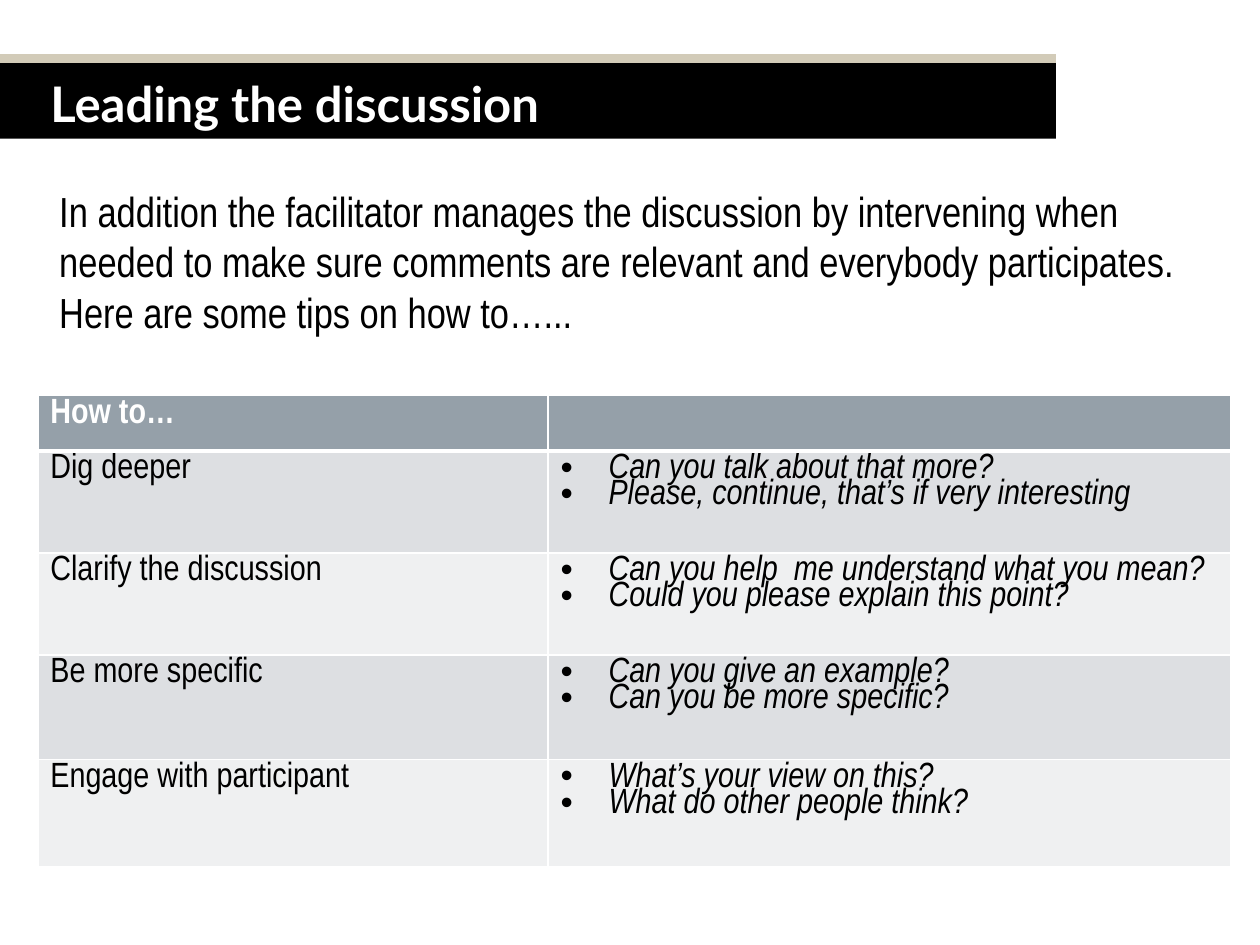
"""Build the slide on leading a discussion."""
from dataclasses import dataclass

import lxml.etree
import pptx
import pptx.dml.color
import pptx.enum.shapes
import pptx.enum.text
import pptx.oxml.ns
import pptx.util

Inches = pptx.util.Inches
Pt = pptx.util.Pt
Anchor = pptx.enum.text.MSO_ANCHOR


@dataclass(frozen=True)
class Theme:
    white: str = "FFFFFF"
    black: str = "000000"
    accent: str = "D2CBB8"
    header: str = "95A0A9"
    bands: tuple[str, str] = ("DDDFE2", "EFF0F1")
    title_font: str = "Lato"
    text_font: str = "Arial Narrow"
    title_size: int = 28
    intro_size: int = 24
    table_size: int = 20


@dataclass(frozen=True)
class Area:
    left: float
    top: float
    width: float
    height: float

    def lengths(self) -> tuple:
        return tuple(map(Inches, (self.left, self.top, self.width, self.height)))


@dataclass(frozen=True)
class Tip:
    goal: str
    phrases: tuple[str, ...]
    height: float


THEME = Theme()
ACCENT_AREA = Area(0, 0.43, 8.38, 0.07)
TITLE_AREA = Area(0, 0.49, 8.38, 0.61)
INTRO_AREA = Area(0.37, 1.42, 9.32, 1.3)
TABLE_AREA = Area(0.3, 3.14, 9.47, 3.74)
COLUMN_WIDTHS = (4.05, 5.42)
HEADER_HEIGHT = 0.44
TITLE = "Leading the discussion"
INTRO = (
    "In addition the facilitator manages the discussion by intervening when "
    "needed to make sure comments are relevant and everybody participates.",
    "Here are some tips on how to…...",
)
TIPS = (
    Tip("Dig deeper", ("Can you talk about that more?",
                       "Please, continue, that’s if very interesting"), 0.81),
    Tip("Clarify the discussion", ("Can you help  me understand what you mean?",
                                   "Could you please explain this point?"), 0.81),
    Tip("Be more specific", ("Can you give an example?",
                             "Can you be more specific?"), 0.83),
    Tip("Engage with participant", ("What’s your view on this?",
                                    "What do other people think?"), 0.85),
)


def rgb(value: str) -> pptx.dml.color.RGBColor:
    return pptx.dml.color.RGBColor.from_string(value)


def add_element(parent, tag: str, **attributes: str):
    element = lxml.etree.SubElement(parent, pptx.oxml.ns.qn(tag))
    for name, value in attributes.items():
        element.set(name, value)
    return element


def paint(target, color: str) -> None:
    target.fill.solid()
    target.fill.fore_color.rgb = rgb(color)


def style(para, font: str, size: int, color: str, bold=False, italic=False) -> None:
    para.font.name = font
    para.font.size = Pt(size)
    para.font.color.rgb = rgb(color)
    para.font.bold = bold
    para.font.italic = italic


def set_bullet(para, symbol: str = "", indent: float = 0) -> None:
    properties = para._p.get_or_add_pPr()
    properties.set("marL", str(Inches(indent)))
    properties.set("indent", str(-Inches(indent)))
    if symbol:
        add_element(properties, "a:buFont", typeface="Arial")
        add_element(properties, "a:buChar", char=symbol)
    else:
        add_element(properties, "a:buNone")


def write_lines(frame, lines: tuple[str, ...]) -> list:
    for index, line in enumerate(lines):
        para = frame.add_paragraph() if index else frame.paragraphs[0]
        para.text = line
    return list(frame.paragraphs)


def place(shape, area: Area, anchor) -> None:
    shape.left, shape.top, shape.width, shape.height = area.lengths()
    shape.text_frame.vertical_anchor = anchor
    shape.text_frame.auto_size = pptx.enum.text.MSO_AUTO_SIZE.NONE
    shape.text_frame.word_wrap = True


def add_title(page) -> None:
    accent = page.shapes.add_shape(
        pptx.enum.shapes.MSO_SHAPE.RECTANGLE, *ACCENT_AREA.lengths())
    accent.shadow.inherit = False
    accent.line.fill.background()
    paint(accent, THEME.accent)
    title = page.shapes.title
    place(title, TITLE_AREA, Anchor.BOTTOM)
    paint(title, THEME.black)
    title.text_frame.margin_left = Inches(0.4)
    para = write_lines(title.text_frame, (TITLE,))[0]
    para.alignment = pptx.enum.text.PP_ALIGN.LEFT
    style(para, THEME.title_font, THEME.title_size, THEME.white, bold=True)


def add_intro(page) -> None:
    body = page.placeholders[1]
    place(body, INTRO_AREA, Anchor.TOP)
    for para in write_lines(body.text_frame, INTRO):
        set_bullet(para)
        para.space_before = Pt(0)
        style(para, THEME.text_font, THEME.intro_size, THEME.black)


def set_borders(cell, top: float = 1, bottom: float = 1) -> None:
    properties = cell._tc.get_or_add_tcPr()
    for side, width in (("L", 1), ("R", 1), ("T", top), ("B", bottom)):
        line = add_element(properties, f"a:ln{side}", w=str(Pt(width)))
        add_element(add_element(line, "a:solidFill"), "a:srgbClr", val=THEME.white)


def fill_cell(cell, lines: tuple[str, ...], fill: str, color: str,
              bold=False, bulleted=False) -> None:
    paint(cell, fill)
    for para in write_lines(cell.text_frame, lines):
        if bulleted:
            set_bullet(para, "•", 0.38)
        para.line_spacing = 0.8
        style(para, THEME.text_font, THEME.table_size, color, bold, bulleted)


def add_tips(page) -> None:
    table = page.shapes.add_table(
        len(TIPS) + 1, len(COLUMN_WIDTHS), *TABLE_AREA.lengths()).table
    for column, width in zip(table.columns, COLUMN_WIDTHS):
        column.width = Inches(width)
    table.rows[0].height = Inches(HEADER_HEIGHT)
    for cell, lines in zip(table.rows[0].cells, (("How to…",), ())):
        set_borders(cell, bottom=3)
        fill_cell(cell, lines, THEME.header, THEME.white, bold=True)
    for index, tip in enumerate(TIPS):
        row = table.rows[index + 1]
        row.height = Inches(tip.height)
        fill = THEME.bands[index % 2]
        for cell in row.cells:
            set_borders(cell, top=1 if index else 3)
        fill_cell(row.cells[0], (tip.goal,), fill, THEME.black)
        fill_cell(row.cells[1], tip.phrases, fill, THEME.black, bulleted=True)


def main() -> None:
    deck = pptx.Presentation()
    deck.slide_width, deck.slide_height = Inches(10), Inches(7.5)
    page = deck.slides.add_slide(deck.slide_layouts[1])
    add_title(page)
    add_intro(page)
    add_tips(page)
    deck.save("out.pptx")


if __name__ == "__main__":
    main()
